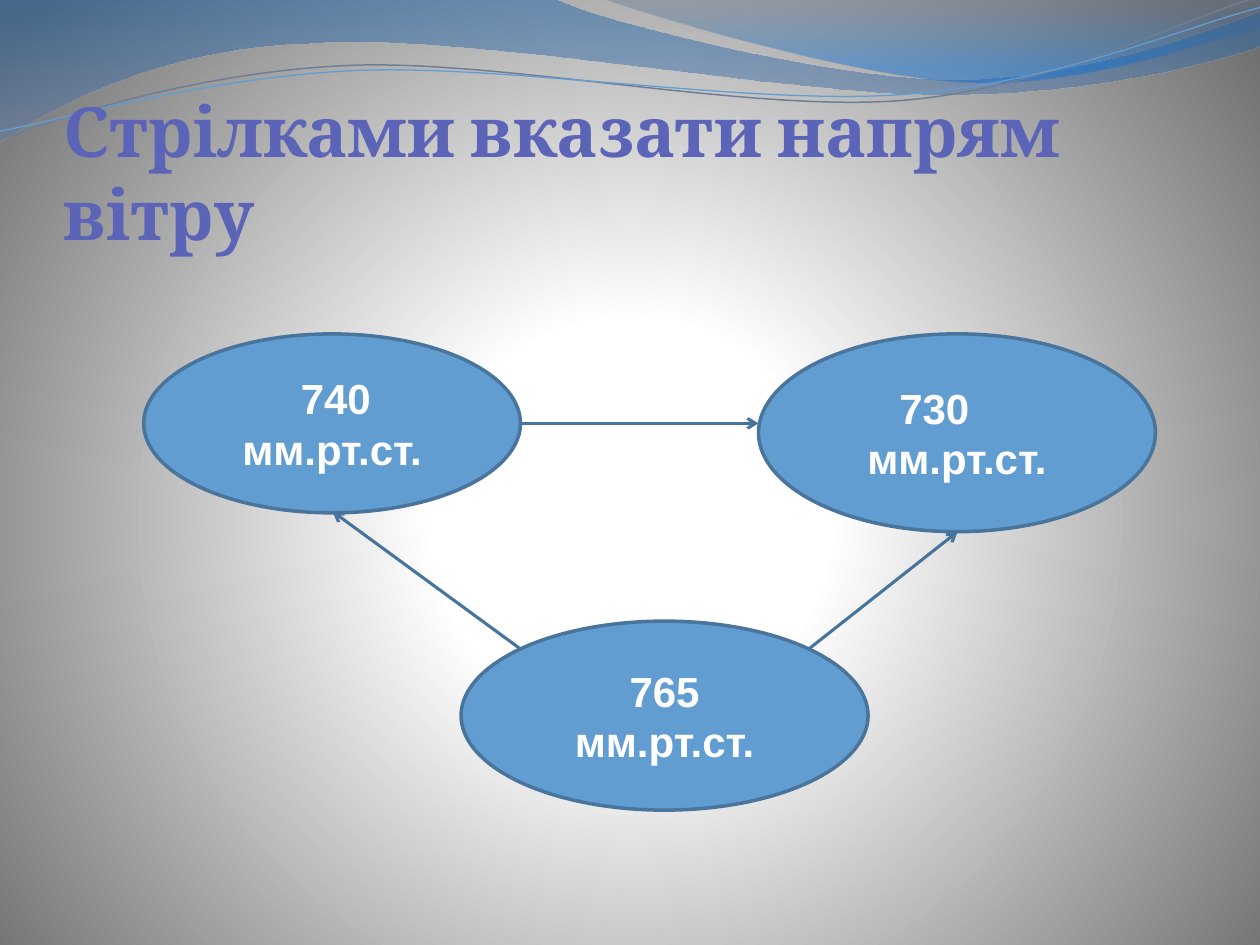
from math import cos, radians, sin

from lxml import etree
from pptx import Presentation
from pptx.dml.color import RGBColor
from pptx.enum.shapes import MSO_CONNECTOR, MSO_SHAPE
from pptx.enum.text import MSO_ANCHOR, PP_ALIGN
from pptx.oxml.ns import qn
from pptx.util import Inches, Pt

OVAL = MSO_SHAPE.OVAL
LINE = MSO_CONNECTOR.STRAIGHT
MIDDLE, BOTTOM = MSO_ANCHOR.MIDDLE, MSO_ANCHOR.BOTTOM
CENTER = PP_ALIGN.CENTER
TILT = 2.7

BANDS = [
    ([(0, 0), (4.4, -0.01),
      (4.76, 0.17, 6.64, 0.63, 7.58, 0.63), (8.53, 0.63, 9.58, 0.26, 10, 0.09),
      (10.01, 0.36),
      (9.83, 0.44, 8.7, 0.76, 7.46, 0.75), (6.22, 0.75, 3.82, 0.28, 2.57, 0.34),
      (1.29, 0.36, 0.46, 0.83, -0.01, 1.13)],
     [(0, "125EAA", 45), (100, "697FA4", 55)]),
    ([(4.79, -0.01),
      (5.09, 0.11, 6.82, 0.62, 7.69, 0.65), (8.56, 0.69, 9.61, 0.32, 10, 0.21),
      (10, 0)],
     [(0, "596982", 30), (80, "0670DA", 45)]),
]
WAVES = [
    ([(0, 1.11), (0.48, 0.93, 1.58, 0.57, 2.77, 0.52),
      (3.95, 0.47, 5.93, 0.89, 7.13, 0.8), (8.33, 0.71, 9.38, 0.15, 9.98, -0.02)],
     "707E95", 0.85),
    ([(0, 1.04), (0.47, 0.96, 1.64, 0.61, 2.83, 0.56),
      (4.03, 0.51, 5.97, 0.84, 7.17, 0.75), (8.36, 0.67, 9.41, 0.21, 10, 0.06)],
     "629DD1", 0.75),
]
OVALS = [
    ("740", 1.14, 2.65, 2.99, 1.42, 0.06, 0),
    ("765", 3.66, 4.93, 3.23, 1.5, 0, 0),
    ("730", 6.02, 2.65, 3.15, 1.57, 0, 0.36),
]
WINDS = [
    (4.13, 3.36, 6.02, 3.36),
    (4.13, 5.15, 2.64, 4.06),
    (6.42, 5.15, 7.6, 4.22),
]


def rgb(code):
    """Turn a hex string into a colour."""
    return RGBColor.from_string(code)


def sub(node, tag, **attrs):
    """Append a child element with attributes."""
    child = etree.SubElement(node, qn(tag))
    for key, val in attrs.items():
        child.set(key, str(val))
    return child


def shade(owner, node, stops, focus=None):
    """Give owner a gradient fill, downward or radial about a focus."""
    owner.fill.solid()
    old = node.xpath(".//a:solidFill")[0]
    grad = etree.Element(qn("a:gradFill"), rotWithShape="1")
    items = sub(grad, "a:gsLst")
    for pos, code, alpha in stops:
        stop = sub(items, "a:gs", pos=pos * 1000)
        sub(sub(stop, "a:srgbClr", val=code), "a:alpha", val=alpha * 1000)
    if focus:
        sub(sub(grad, "a:path", path="circle"), "a:fillToRect", **focus)
    else:
        sub(grad, "a:lin", ang=5400000, scaled=1)
    old.getparent().replace(old, grad)


def pairs(step):
    """Split a step into its points."""
    return list(zip(step[::2], step[1::2]))


def outline(slide, steps, close):
    """Draw a freeform whose long steps are cubic curves."""
    ends = [(Inches(s[-2]), Inches(s[-1])) for s in steps]
    pen = slide.shapes.build_freeform(*ends[0])
    pen.add_line_segments(ends[1:], close=close)
    shape = pen.convert_to_shape()
    shape.shadow.inherit = False
    for step, old in zip(steps[1:], shape._element.xpath(".//a:lnTo")):
        if len(step) > 2:
            curve = etree.Element(qn("a:cubicBezTo"))
            for x, y in pairs(step):
                sub(curve, "a:pt", x=Inches(x) - shape.left, y=Inches(y) - shape.top)
            old.getparent().replace(old, curve)
    return shape


def add_band(slide, steps, stops):
    """Add a filled wave band."""
    band = outline(slide, steps, True)
    shade(band, band._element, stops)
    band.line.fill.background()


def turn(step, mid):
    """Turn the points of a step clockwise by the tilt about a centre."""
    c, s = cos(radians(TILT)), sin(radians(TILT))
    out = []
    for x, y in pairs(step):
        dx, dy = x - mid[0], y - mid[1]
        out += [mid[0] + dx * c - dy * s, mid[1] + dx * s + dy * c]
    return out


def add_wave(slide, steps, code, width):
    """Add a thin wavy line, tilted to the left."""
    mid = (5, 0.57)
    wave = outline(slide, [turn(step, mid) for step in steps], False)
    wave.rotation = 360 - TILT
    wave.fill.background()
    wave.line.color.rgb = rgb(code)
    wave.line.width = Pt(width)


def style(para, name, size, code):
    """Set the bold font of a paragraph."""
    font = para.font
    font.name, font.size, font.bold = name, Pt(size), True
    font.color.rgb = rgb(code)


def add_title(slide, text):
    """Add the slide heading."""
    box = slide.shapes.add_textbox(Inches(0.5), Inches(0.77), Inches(9.08), Inches(1.25))
    frame = box.text_frame
    frame.word_wrap = True
    frame.vertical_anchor = BOTTOM
    frame.margin_left = frame.margin_right = frame.margin_bottom = 0
    frame.text = text
    style(frame.paragraphs[0], "Cambria", 39.6, "5C64B7")


def add_oval(slide, value, x, y, w, h, left, right):
    """Add a pressure area, its value indented from left or right."""
    oval = slide.shapes.add_shape(OVAL, Inches(x), Inches(y), Inches(w), Inches(h))
    oval.shadow.inherit = False
    oval.fill.solid()
    oval.fill.fore_color.rgb = rgb("629DD1")
    oval.line.color.rgb = rgb("49749B")
    oval.line.width = Pt(2)
    frame = oval.text_frame
    frame.word_wrap = True
    frame.vertical_anchor = MIDDLE
    frame.text = f"{value}\nмм.рт.ст."
    for para, gaps in zip(frame.paragraphs, [(left, right), (0, 0)]):
        para.alignment = CENTER
        style(para, "Arial", 24, "FFFFFF")
        for key, gap in zip(("marL", "marR"), gaps):
            para._p.get_or_add_pPr().set(key, str(Inches(gap)))


def add_wind(slide, *ends):
    """Add an arrow for the wind."""
    wind = slide.shapes.add_connector(LINE, *[Inches(v) for v in ends])
    wind.line.color.rgb = rgb("47749C")
    wind.line.width = Pt(1.75)
    sub(wind.line._get_or_add_ln(), "a:tailEnd", type="arrow")
    sub(wind._element.spPr, "a:effectLst")


def main():
    """Build and save the slide."""
    deck = Presentation()
    deck.slide_width, deck.slide_height = Inches(10), Inches(7.5)
    slide = deck.slides.add_slide(deck.slide_layouts[6])
    shade(slide.background, slide._element,
          [(0, "FFFFFF", 100), (25, "FFFFFF", 100), (100, "707070", 100)],
          dict(l=10000, t=110000, r=10000, b=100000))
    for band in BANDS:
        add_band(slide, *band)
    for wave in WAVES:
        add_wave(slide, *wave)
    add_title(slide, "Стрілками вказати напрям вітру")
    for oval in OVALS:
        add_oval(slide, *oval)
    for wind in WINDS:
        add_wind(slide, *wind)
    deck.save("out.pptx")


if __name__ == "__main__":
    main()
